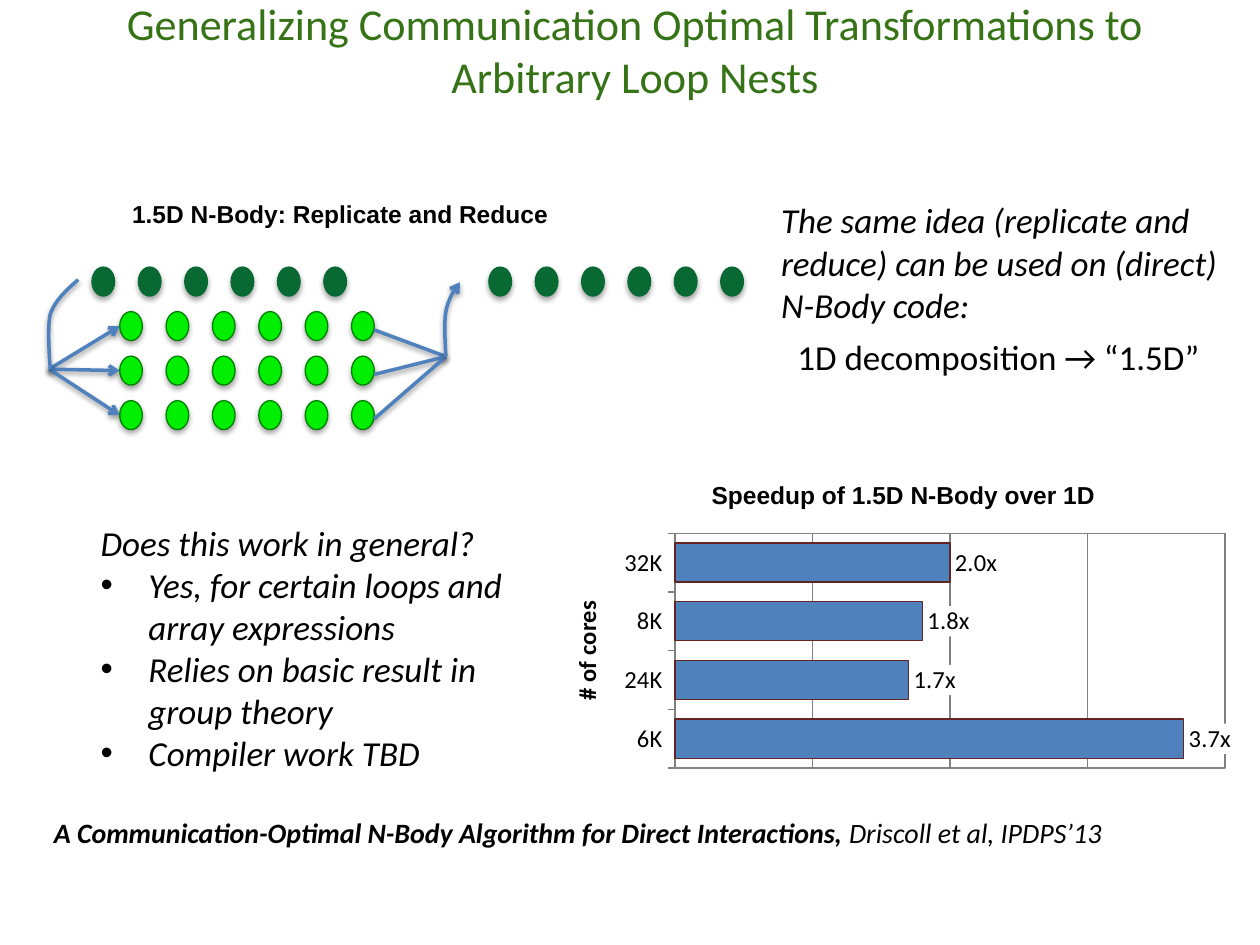
from pptx import Presentation
from pptx.chart.data import CategoryChartData
from pptx.dml.color import RGBColor
from pptx.enum.chart import XL_CHART_TYPE, XL_LABEL_POSITION, XL_TICK_MARK
from pptx.enum.shapes import MSO_CONNECTOR, MSO_SHAPE
from pptx.enum.text import PP_ALIGN
from pptx.oxml import parse_xml
from pptx.oxml.ns import nsdecls, qn
from pptx.util import Inches, Pt
from lxml.etree import SubElement

COLORS = {
    "title": "367317", "text": "000000", "blue": "4F81BD", "bar_line": "632523",
    "body": "096933", "replica": "00EE00", "replica_line": "008000",
    "grid": "808080", "white": "FFFFFF",
}
COLUMNS = 6
COLUMN_GAP = 1.84 / (COLUMNS - 1)
ROW_GAP = 1.06 / 3
BODY_WIDTH, BODY_HEIGHT = 0.18, 0.23
BODY_TOP = 2.12
REPLICA_LEFT = 0.95


def color(name):
    return RGBColor.from_string(COLORS[name])


def format_line(line, name, width):
    line.color.rgb = color(name)
    line.width = Pt(width)


def add_shadow(shape, alpha, distance):
    """Put a soft shadow straight below the shape, replacing the theme's."""
    shape._element.spPr.append(parse_xml(
        f'<a:effectLst {nsdecls("a")}><a:outerShdw blurRad="{Pt(3.1)}" dist="{Pt(distance)}" '
        f'dir="5400000" rotWithShape="0"><a:srgbClr val="{COLORS["text"]}">'
        f'<a:alpha val="{alpha}000"/></a:srgbClr></a:outerShdw></a:effectLst>'))


def add_arrowhead(shape, end):
    SubElement(shape.line._get_or_add_ln(), qn(f"a:{end}"), type="arrow")


def write_paragraph(paragraph, *runs, size=20, font="Calibri", name="text", bold=False,
                    italic=False, align=PP_ALIGN.LEFT, before=0, indent=0, bullet=False):
    """Fill a paragraph; each run is a text or a (text, bold) pair."""
    properties = paragraph._p.get_or_add_pPr()
    if indent:
        properties.set("marL", str(Inches(indent)))
    if bullet:
        properties.set("indent", str(-Inches(indent)))
        SubElement(properties, qn("a:buFont"), typeface="Arial")
        SubElement(properties, qn("a:buChar"), char="•")
    paragraph.alignment = align
    if before:
        paragraph.space_before = Pt(before)
    for item in runs:
        text, run_bold = (item, bold) if isinstance(item, str) else item
        run = paragraph.add_run()
        run.text = text
        run.font.size = Pt(size)
        run.font.name = font
        run.font.bold = run_bold
        run.font.italic = italic
        run.font.color.rgb = color(name)


def cubic_points(start, control_1, control_2, end, steps=16):
    """Sample a cubic Bezier curve, leaving out its start."""
    for step in range(1, steps + 1):
        t = step / steps
        weights = ((1 - t) ** 3, 3 * t * (1 - t) ** 2, 3 * t ** 2 * (1 - t), t ** 3)
        points = (start, control_1, control_2, end)
        yield tuple(Inches(sum(w * p[axis] for w, p in zip(weights, points)))
                    for axis in (0, 1))


class SlideBuilder:
    """Holds the slide and its shared style."""

    def __init__(self, slide):
        self.shapes = slide.shapes

    def text(self, left, top, width, height, *paragraphs, wrap=True):
        """Add a text box; each paragraph is a (runs, format) pair."""
        box = self.shapes.add_textbox(*map(Inches, (left, top, width, height)))
        frame = box.text_frame
        frame.word_wrap = wrap
        for index, (runs, style) in enumerate(paragraphs):
            paragraph = frame.add_paragraph() if index else frame.paragraphs[0]
            write_paragraph(paragraph, *runs, **style)

    def body_row(self, left, top, fill, line):
        for column in range(COLUMNS):
            shape = self.shapes.add_shape(
                MSO_SHAPE.OVAL, Inches(left + column * COLUMN_GAP), Inches(top),
                Inches(BODY_WIDTH), Inches(BODY_HEIGHT))
            shape.fill.solid()
            shape.fill.fore_color.rgb = color(fill)
            format_line(shape.line, line, 0.75)
            add_shadow(shape, 35, 1.8)

    def connector(self, start, end, arrow=False):
        connector = self.shapes.add_connector(
            MSO_CONNECTOR.STRAIGHT, *map(Inches, (*start, *end)))
        format_line(connector.line, "blue", 2)
        if arrow:
            add_arrowhead(connector, "tailEnd")
        add_shadow(connector, 38, 1.6)

    def curve(self, start, *segments, arrow=False):
        """Draw joined cubic segments, each with two controls and an end."""
        builder = self.shapes.build_freeform(*map(Inches, start))
        for segment in segments:
            builder.add_line_segments(list(cubic_points(start, *segment)), close=False)
            start = segment[-1]
        shape = builder.convert_to_shape()
        shape.fill.background()
        format_line(shape.line, "blue", 2)
        if arrow:
            add_arrowhead(shape, "headEnd")
        add_shadow(shape, 38, 1.6)

    def bar_chart(self, left, top, width, height, categories, values):
        data = CategoryChartData(number_format="0.0")
        data.categories = categories
        data.add_series("Series 1", values)
        chart = self.shapes.add_chart(
            XL_CHART_TYPE.BAR_CLUSTERED, *map(Inches, (left, top, width, height)), data).chart
        chart.has_legend = False
        chart.has_title = False
        chart.font.size = Pt(14)
        chart.font.name = "Calibri"
        chart.font.color.rgb = color("text")

        category_axis = chart.category_axis
        category_axis.major_tick_mark = XL_TICK_MARK.OUTSIDE
        format_line(category_axis.format.line, "grid", 0.75)
        write_paragraph(category_axis.axis_title.text_frame.paragraphs[0], "# of cores",
                        size=14, bold=True, align=PP_ALIGN.CENTER)
        value_axis = chart.value_axis
        value_axis.visible = False
        value_axis.minimum_scale, value_axis.maximum_scale = 0, 4
        value_axis.major_unit = 1
        format_line(value_axis.major_gridlines.format.line, "grid", 0.75)

        plot = chart.plots[0]
        plot.gap_width = 50
        plot.vary_by_categories = False
        bars = plot.series[0].format
        bars.fill.solid()
        bars.fill.fore_color.rgb = color("blue")
        format_line(bars.line, "bar_line", 0.75)
        plot.has_data_labels = True
        labels = plot.data_labels
        labels.show_value = True
        labels.number_format = '0.0"x"'
        labels.number_format_is_linked = False
        labels.position = XL_LABEL_POSITION.OUTSIDE_END
        labels._element.find(qn("c:numFmt")).addnext(parse_xml(
            f'<c:spPr {nsdecls("c", "a")}><a:solidFill><a:srgbClr val="{COLORS["white"]}"/>'
            '</a:solidFill></c:spPr>'))
        self.place_plot(chart, x=0.19, y=0.1, w=0.77, h=0.84)

    def place_plot(self, chart, **place):
        """Fix the inner plot area as fractions of the chart, and frame it."""
        area = chart._chartSpace.chart.plotArea
        for old_layout in area.findall(qn("c:layout")):
            area.remove(old_layout)
        sizes = "".join(f'<c:{key} val="{value}"/>' for key, value in place.items())
        area.insert(0, parse_xml(
            f'<c:layout {nsdecls("c")}><c:manualLayout><c:layoutTarget val="inner"/>'
            f'<c:xMode val="edge"/><c:yMode val="edge"/>{sizes}</c:manualLayout></c:layout>'))
        area.append(parse_xml(
            f'<c:spPr {nsdecls("c", "a")}><a:noFill/><a:ln w="{Pt(0.75)}"><a:solidFill>'
            f'<a:srgbClr val="{COLORS["grid"]}"/></a:solidFill></a:ln></c:spPr>'))


def main():
    presentation = Presentation()
    presentation.slide_width, presentation.slide_height = Inches(10), Inches(7.5)
    builder = SlideBuilder(presentation.slides.add_slide(presentation.slide_layouts[6]))
    heading = dict(size=14, font="Arial", bold=True)
    remark = dict(italic=True)
    bullet = dict(italic=True, indent=0.38, bullet=True)

    builder.text(0.33, -0.08, 9.42, 0.75, (
        ["Generalizing Communication Optimal Transformations to Arbitrary Loop Nests"],
        dict(size=25.2, name="title", align=PP_ALIGN.CENTER)))
    builder.text(5.55, 3.76, 3.33, 0.34, (["Speedup of 1.5D N-Body over 1D"], heading))
    builder.bar_chart(4.28, 4.01, 5.67, 2.22, ["6K", "24K", "8K", "32K"], [3.7, 1.7, 1.8, 2.0])

    builder.text(0.95, 1.53, 4.77, 0.47,
                 (["1.5D N-Body: Replicate and Reduce"], heading), wrap=False)
    for left in (0.73, 3.88):
        builder.body_row(left, BODY_TOP, "body", "body")
    replica_right = REPLICA_LEFT + (COLUMNS - 1) * COLUMN_GAP + BODY_WIDTH
    for row in range(1, 4):
        top = BODY_TOP + row * ROW_GAP
        middle = top + BODY_HEIGHT / 2
        builder.body_row(REPLICA_LEFT, top, "replica", "replica_line")
        builder.connector((0.39, 2.93), (REPLICA_LEFT, middle), arrow=True)
        builder.connector((3.54, 2.83), (replica_right, middle + 0.03))
    builder.curve((0.62, 2.22), ((0.53, 2.3), (0.44, 2.38), (0.4, 2.49)),
                  ((0.37, 2.61), (0.4, 2.93), (0.4, 2.93)))
    builder.curve((3.65, 2.24), ((3.6, 2.31), (3.56, 2.37), (3.54, 2.47)),
                  ((3.52, 2.57), (3.54, 2.83), (3.54, 2.83)), arrow=True)

    builder.text(
        6.1, 1.53, 3.82, 1.95,
        (["The same idea (replicate and reduce) can be used on (direct) N-Body code:"], remark),
        (["1D decomposition → “1.5D”"], dict(before=6, indent=0.13)))
    builder.text(
        0.7, 4.09, 3.82, 2.12,
        (["Does this work in general?"], remark),
        (["Yes, for certain loops and array expressions"], bullet),
        (["Relies on basic result in group theory"], bullet),
        (["Compiler work TBD"], bullet))
    builder.text(0.33, 6.42, 9.5, 0.37, (
        [("A Communication-Optimal N-Body Algorithm for Direct Interactions, ", True),
         "Driscoll et al, IPDPS’13"], dict(size=16, italic=True)))
    presentation.save("out.pptx")


if __name__ == "__main__":
    main()
